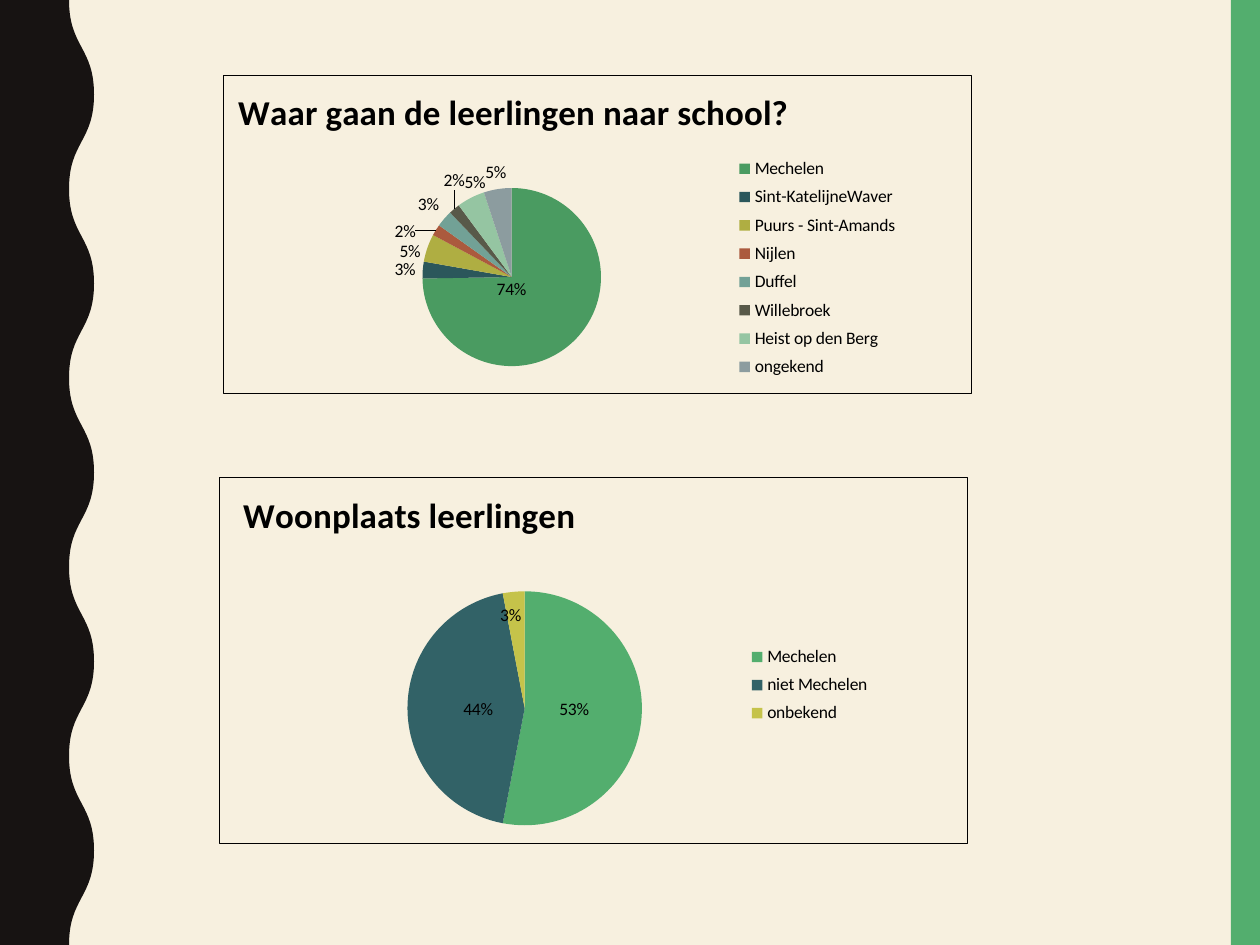
from lxml import etree
from pptx import Presentation
from pptx import util as u
from pptx.chart import data as chart_data
from pptx.dml import color
from pptx.enum import chart as chart_enum
from pptx.enum import shapes
from pptx.oxml import ns

SCALE = 914400 / 126
WIDTH, HEIGHT = 1260, 945
FONT = "Calibri"
COLORS = {
    "background": "F7F0DF", "edge": "171312", "green": "53AE6E",
    "teal": "326267", "yellow": "C5C34A", "text": "000000",
}
SCHOOL_COLORS = ["4A9B61", "2B575B", "AFAE42", "AB5A3E",
                 "72A196", "585949", "95C5A2", "8C9C9F"]
HOME_COLORS = [COLORS[name] for name in ("green", "teal", "yellow")]
POSITION = chart_enum.XL_LABEL_POSITION

SCHOOLS = {
    "title": "Waar gaan de leerlingen naar school?",
    "series": "Series 1",
    "values": {"Mechelen": 74, "Sint-KatelijneWaver": 3,
               "Puurs - Sint-Amands": 5, "Nijlen": 2, "Duffel": 3,
               "Willebroek": 2, "Heist op den Berg": 5, "ongekend": 5},
    "colors": SCHOOL_COLORS,
    "position": POSITION.OUTSIDE_END,
    "labels": {0: (POSITION.CENTER, -32, -19),
               2: (POSITION.OUTSIDE_END, 0, 16),
               3: (POSITION.OUTSIDE_END, -14, 15),
               5: (POSITION.OUTSIDE_END, 15, -13),
               6: (POSITION.OUTSIDE_END, 18, 1),
               7: (POSITION.OUTSIDE_END, 10, 1)},
    "layouts": {"title": (8, 5), "plotArea": (199, 113, 179, 179),
                "legend": (505, 75, 180, 236)},
}
HOMES = {
    "title": "Woonplaats leerlingen",
    "series": "Woonplaats leerlingen",
    "values": {"Mechelen": 53, "niet Mechelen": 44, "onbekend": 3},
    "colors": HOME_COLORS,
    "position": POSITION.INSIDE_END,
    "labels": {0: (POSITION.CENTER, -9, -4), 1: (POSITION.CENTER, 12, 1),
               2: (POSITION.INSIDE_END, -14, 7)},
    "layouts": {"title": (17, 6), "plotArea": (188, 114, 235, 235),
                "legend": (526, 162, 130, 93)},
}


def px(*lengths):
    return [round(length * SCALE) for length in lengths]


def rgb(value):
    return color.RGBColor.from_string(value)


def set_attributes(target, values):
    for name, value in values.items():
        setattr(target, name, value)


def fill_shape(shape, value):
    shape.shadow.inherit = False
    shape.fill.solid()
    shape.fill.fore_color.rgb = rgb(value)
    shape.line.fill.background()


def add_side_bar(slide, box):
    shape = slide.shapes.add_shape(shapes.MSO_SHAPE.RECTANGLE, *px(*box))
    fill_shape(shape, COLORS["green"])


def add_wavy_edge(slide, box, depth=25, half_waves=10):
    left, top, width, height = box
    step = height / half_waves
    inner = width - depth
    anchors = [(width if wave % 2 else inner, wave * step)
               for wave in range(half_waves + 1)]
    corners = anchors[1:] + [(0, height), (0, 0)]
    builder = slide.shapes.build_freeform(
        *px(left + inner, top), scale=1.0)
    builder.add_line_segments(
        [px(left + x, top + y) for x, y in corners], close=True)
    shape = builder.convert_to_shape()
    fill_shape(shape, COLORS["edge"])
    lines = shape.element.xpath(".//a:lnTo")[:half_waves]
    for line, start, end in zip(lines, anchors, anchors[1:]):
        middle = (start[1] + end[1]) / 2
        curve = etree.Element(ns.qn("a:cubicBezTo"))
        for point in ((start[0], middle), (end[0], middle), end):
            x, y = px(*point)
            etree.SubElement(curve, ns.qn("a:pt"), x=str(x), y=str(y))
        line.getparent().replace(line, curve)


def make_layout(fractions, edge=True, inner=False):
    layout = etree.Element(ns.qn("c:layout"))
    manual = etree.SubElement(layout, ns.qn("c:manualLayout"))
    entries = [("layoutTarget", "inner")] if inner else []
    if edge:
        entries += [("xMode", "edge"), ("yMode", "edge")]
    entries += [(name, f"{value:.3f}") for name, value in zip("xywh", fractions)]
    for name, value in entries:
        etree.SubElement(manual, ns.qn(f"c:{name}"), val=value)
    return layout


def place_part(chart, name, fractions):
    part = chart.element.xpath(f".//c:{name}")[0]
    for old in part.findall(ns.qn("c:layout")):
        part.remove(old)
    index = 0 if name == "plotArea" else 1
    part.insert(index, make_layout(fractions, inner=name == "plotArea"))


def add_border(chart):
    properties = etree.Element(ns.qn("c:spPr"))
    etree.SubElement(properties, ns.qn("a:noFill"))
    line = etree.SubElement(properties, ns.qn("a:ln"), w=str(u.Pt(0.75)))
    solid = etree.SubElement(line, ns.qn("a:solidFill"))
    etree.SubElement(solid, ns.qn("a:srgbClr"), val=COLORS["text"])
    chart.element.find(ns.qn("c:chart")).addnext(properties)


def add_pie(slide, box, content):
    width, height = box[2:]
    table = chart_data.CategoryChartData(number_format='0"%"')
    table.categories = list(content["values"])
    table.add_series(content["series"], list(content["values"].values()))
    chart = slide.shapes.add_chart(
        chart_enum.XL_CHART_TYPE.PIE, *px(*box), table).chart
    set_attributes(chart.font, {"name": FONT, "size": u.Pt(10)})
    chart.font.color.rgb = rgb(COLORS["text"])

    chart.has_title = True
    frame = chart.chart_title.text_frame
    frame.text = content["title"]
    title_font = frame.paragraphs[0].runs[0].font
    set_attributes(title_font, {"name": FONT, "size": u.Pt(20), "bold": True})
    title_font.color.rgb = rgb(COLORS["text"])

    chart.has_legend = True
    set_attributes(chart.legend, {
        "position": chart_enum.XL_LEGEND_POSITION.RIGHT,
        "include_in_layout": False})

    plot = chart.plots[0]
    plot.vary_by_categories = True
    series = plot.series[0]
    for index, value in enumerate(content["colors"]):
        fill = series.points[index].format.fill
        fill.solid()
        fill.fore_color.rgb = rgb(value)

    set_attributes(series.data_labels, {
        "show_value": True, "show_percentage": False,
        "position": content["position"]})
    for index, (position, x, y) in content["labels"].items():
        series.points[index].data_label.position = position
        label = chart.element.xpath(f".//c:dLbl[c:idx/@val='{index}']")[0]
        label.insert(1, make_layout((x / width, y / height), edge=False))

    for name, part in content["layouts"].items():
        place_part(chart, name, [length / size for length, size in
                                 zip(part, (width, height) * 2)])
    add_border(chart)


def main():
    presentation = Presentation()
    slide_width, slide_height = px(WIDTH, HEIGHT)
    set_attributes(presentation, {
        "slide_width": slide_width, "slide_height": slide_height})
    slide = presentation.slides.add_slide(presentation.slide_layouts[6])
    slide.background.fill.solid()
    slide.background.fill.fore_color.rgb = rgb(COLORS["background"])
    add_side_bar(slide, (1231, 0, 29, HEIGHT))
    add_wavy_edge(slide, (0, 0, 94, HEIGHT))
    add_pie(slide, (223, 75, 749, 319), SCHOOLS)
    add_pie(slide, (219, 477, 749, 367), HOMES)
    presentation.save("out.pptx")


if __name__ == "__main__":
    main()
